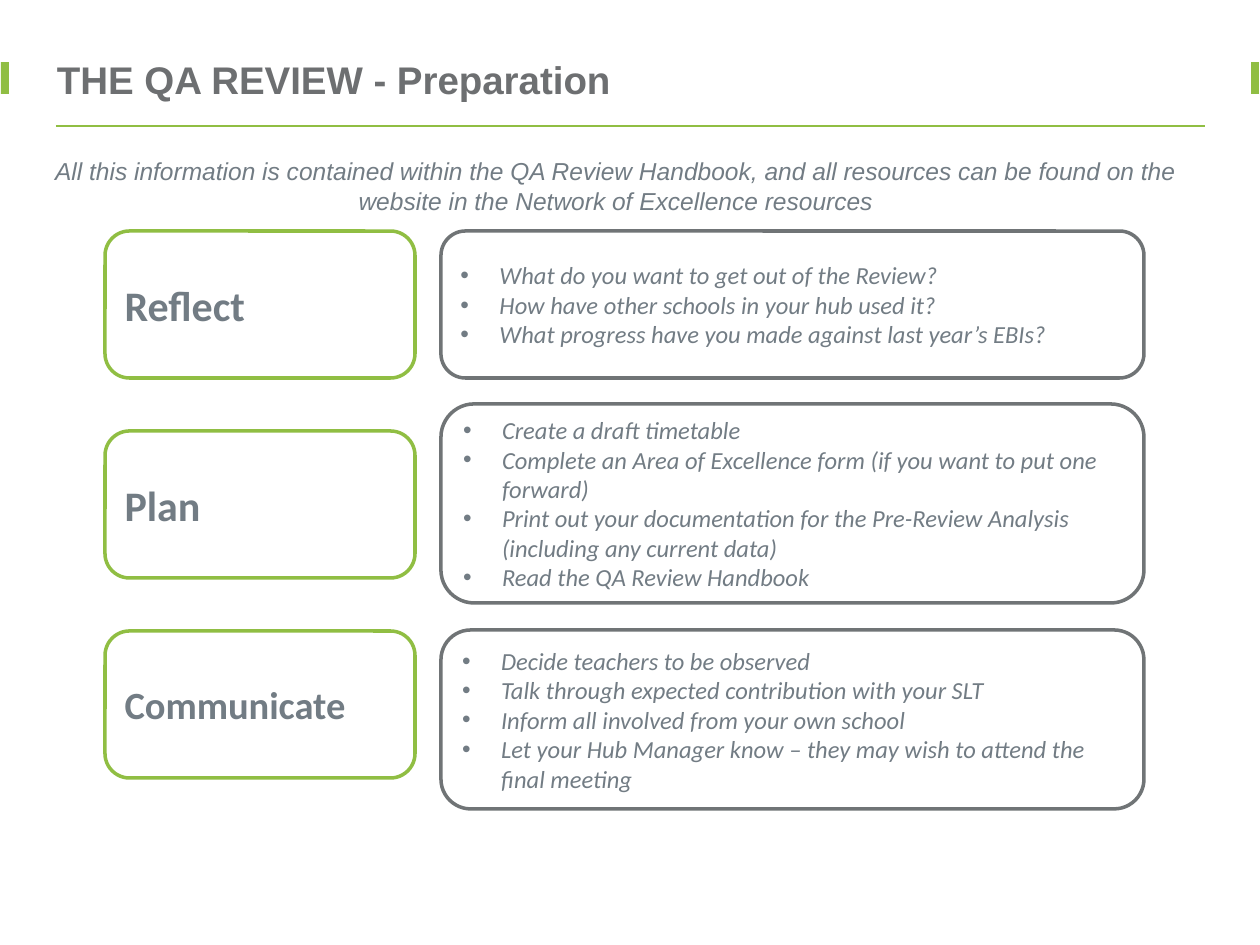
from pptx import Presentation
from pptx.dml.color import RGBColor as Rgb
from pptx.enum.shapes import MSO_CONNECTOR as Conn, MSO_SHAPE as Kind
from pptx.enum.text import MSO_ANCHOR as Anchor, PP_ALIGN as Align
from pptx.oxml.ns import qn
from pptx.util import Emu, Pt
from lxml.etree import SubElement as Sub

SCALE = 914400 / 126
COLORS = {"green": "90BE43", "gray": "707476", "head": "6D6F71",
          "text": "727C84", "white": "FFFFFF"}
HEAD = {"name": "Arial", "size": Pt(22), "bold": True}
NOTE = {"name": "Arial", "size": Pt(14), "italic": True}
LABEL = {"name": "Calibri", "size": Pt(24), "bold": True}
ITEM = {"name": "Calibri", "size": Pt(14), "italic": True}


def px(n):
    return Emu(round(n * SCALE))


def color(key):
    return Rgb.from_string(COLORS[key])


class Deck:
    def __init__(self, wide, high):
        self.prs = Presentation()
        self.prs.slide_width, self.prs.slide_height = px(wide), px(high)
        self.slide = self.prs.slides.add_slide(self.prs.slide_layouts[5])
        self.shapes = self.slide.shapes

    def style(self, para, form, ink, align=Align.LEFT):
        para.alignment = align
        for key, val in form.items():
            setattr(para.font, key, val)
        para.font.color.rgb = color(ink)

    def title(self, text, x, y, w, h):
        box = self.shapes.title
        box.left, box.top, box.width, box.height = map(px, (x, y, w, h))
        frame = box.text_frame
        for side in ("left", "top", "right", "bottom"):
            setattr(frame, f"margin_{side}", 0)
        frame.vertical_anchor = Anchor.MIDDLE
        frame.text = text
        self.style(frame.paragraphs[0], HEAD, "head")

    def note(self, text, x, y, w, h):
        frame = self.shapes.add_textbox(*map(px, (x, y, w, h))).text_frame
        frame.word_wrap = True
        frame.text = text
        self.style(frame.paragraphs[0], NOTE, "text", Align.CENTER)

    def rule(self, x, y, end):
        line = self.shapes.add_connector(Conn.STRAIGHT, px(x), px(y), px(end), px(y))
        line.line.color.rgb = color("green")
        line.line.width = Pt(1)
        Sub(line._element.spPr, qn("a:effectLst"))

    def shape(self, kind, x, y, w, h, fill):
        box = self.shapes.add_shape(kind, *map(px, (x, y, w, h)))
        box.shadow.inherit = False
        box.fill.solid()
        box.fill.fore_color.rgb = color(fill)
        box.line.fill.background()
        return box

    def bullet(self, para):
        props = para._p.get_or_add_pPr()
        indent = px(39)
        props.set("marL", str(indent))
        props.set("indent", str(-indent))
        Sub(Sub(props, qn("a:buClr")), qn("a:srgbClr"), val=COLORS["text"])
        Sub(props, qn("a:buFont"), typeface="Arial")
        Sub(props, qn("a:buChar"), char="•")

    def card(self, lines, x, y, w, h, edge, form, dots=False):
        box = self.shape(Kind.ROUNDED_RECTANGLE, x, y, w, h, "white")
        box.line.color.rgb = color(edge)
        box.line.width = Pt(2)
        frame = box.text_frame
        frame.word_wrap = True
        frame.vertical_anchor = Anchor.MIDDLE
        frame.text = "\n".join(lines)
        for para in frame.paragraphs:
            if dots:
                self.bullet(para)
            self.style(para, form, "text")


# Label, label size, top and height of the list card, list items
ROWS = [
    ("Reflect", 24, 231, 147, [
        "What do you want to get out of the Review?",
        "How have other schools in your hub used it?",
        "What progress have you made against last year’s EBIs?"]),
    ("Plan", 24, 404, 199, [
        "Create a draft timetable",
        "Complete an Area of Excellence form (if you want to put one forward)",
        "Print out your documentation for the Pre-Review Analysis "
        "(including any current data)",
        "Read the QA Review Handbook"]),
    ("Communicate", 22, 630, 179, [
        "Decide teachers to be observed",
        "Talk through expected contribution with your SLT",
        "Inform all involved from your own school",
        "Let your Hub Manager know – they may wish to attend the final meeting"]),
]


def main():
    deck = Deck(1260, 945)

    # Heading with its rule and edge marks
    deck.rule(56, 126, 1205)
    for x in (1, 1251):
        deck.shape(Kind.RECTANGLE, x, 62, 8, 32, "green")
    deck.title("THE QA REVIEW - Preparation", 57, 53, 1172, 52)
    deck.note("All this information is contained within the QA Review Handbook, "
              "and all resources can be found on the website in the Network of "
              "Excellence resources", 25, 150, 1182, 72)

    # One label card and one list card per step
    for i, (name, size, top, high, items) in enumerate(ROWS):
        deck.card([name], 105, 231 + 200 * i, 310, 147, "green",
                  {**LABEL, "size": Pt(size)})
        deck.card(items, 441, top, 703, high, "gray", ITEM, dots=True)

    deck.prs.save("out.pptx")


if __name__ == "__main__":
    main()
